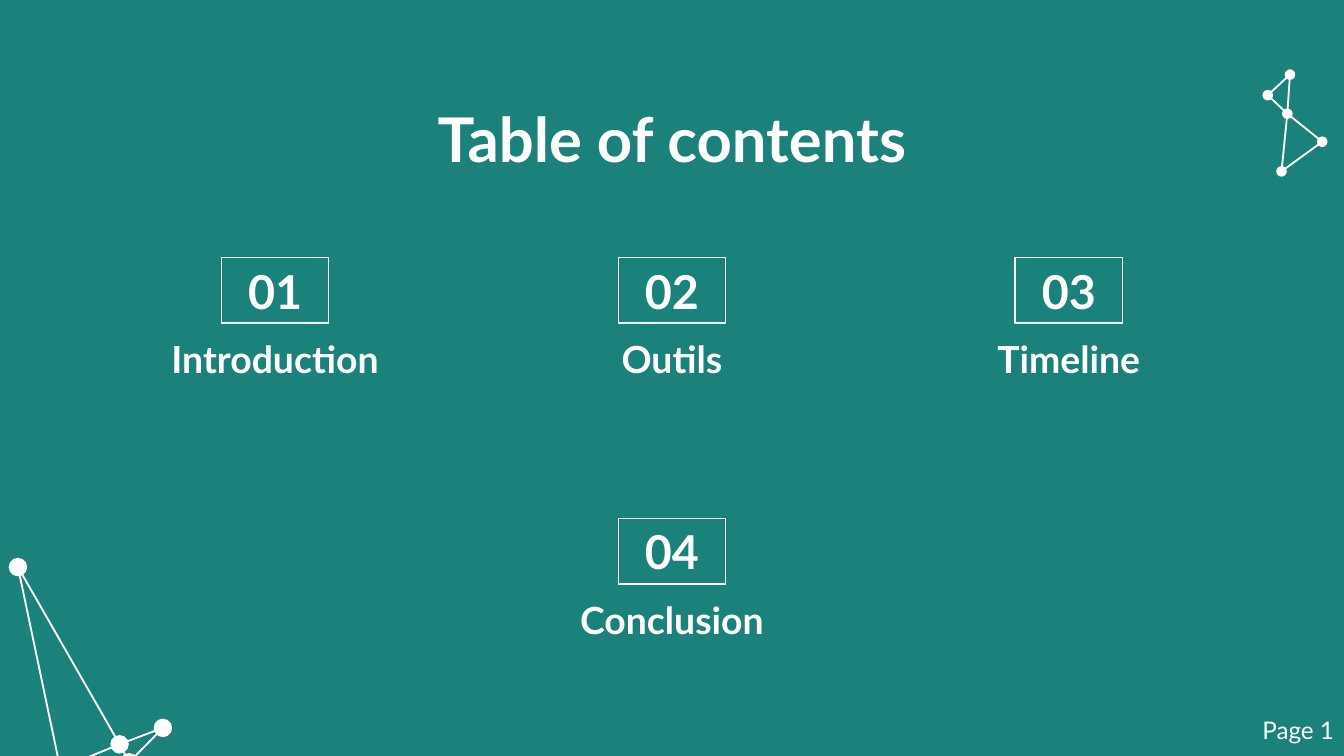
"""Build the table of contents slide with numbered sections and node networks."""
from dataclasses import dataclass
from math import cos, radians, sin

from pptx import Presentation
from pptx.dml.color import RGBColor
from pptx.enum.shapes import MSO_SHAPE
from pptx.enum.text import MSO_ANCHOR, PP_ALIGN
from pptx.shapes.shapetree import GroupShapes
from pptx.slide import Slide
from pptx.text.text import TextFrame
from pptx.util import Cm, Pt

OVAL, RECTANGLE = MSO_SHAPE.OVAL, MSO_SHAPE.RECTANGLE
TOP, MIDDLE = MSO_ANCHOR.TOP, MSO_ANCHOR.MIDDLE
CENTER = PP_ALIGN.CENTER

COLORS = {"background": "1A817B", "foreground": "FFFFFF"}
WHITE = RGBColor.from_string(COLORS["foreground"])
FONT = "Lato"
MARGIN = 0.25
BOX_WIDTH, BOX_HEIGHT = 2.03, 1.24
LABEL_WIDTH, LABEL_HEIGHT = 6.4, 1.4
MIDDLE_X, COLUMN_STEP = 12.7, 7.5
FIRST_ROW, ROW_STEP = 4.87, 4.93

Point = tuple[float, float]


@dataclass(frozen=True)
class Section:
    """A numbered section and its place in the grid."""
    label: str
    column: int
    row: int


@dataclass(frozen=True)
class Network:
    """Points in centimetres, triangles and dots by point name, and a rotation."""
    points: dict[str, Point]
    triangles: tuple[str, ...]
    dots: str
    diameter: float
    rotation: float


SECTIONS = (
    Section("Introduction", -1, 0),
    Section("Outils", 0, 0),
    Section("Timeline", 1, 0),
    Section("Conclusion", 0, 1),
)

NETWORKS = (
    Network(
        {"A": (24.38, 1.41), "B": (23.96, 1.8), "C": (24.33, 2.15),
         "D": (24.99, 2.68), "E": (24.22, 3.24)},
        ("ABC", "CDE"), "ABCDE", 0.2, 0,
    ),
    Network(
        {"A": (0.34, 10.72), "B": (2.26, 14.07), "C": (3.08, 13.76),
         "D": (2.44, 14.41), "E": (1.14, 14.53)},
        ("BCD", "ABE"), "ABCD", 0.35, 45,
    ),
)


def write_text(frame: TextFrame, text: str, *, size: float, bold: bool = True,
               anchor: MSO_ANCHOR = TOP) -> None:
    """Write one centred line into a text frame."""
    frame.word_wrap = True
    frame.vertical_anchor = anchor
    frame.margin_left = frame.margin_right = Cm(MARGIN)
    frame.margin_top = frame.margin_bottom = Cm(MARGIN)
    para = frame.paragraphs[0]
    para.alignment = CENTER
    span = para.add_run()
    span.text = text
    span.font.name = FONT
    span.font.size = Pt(size)
    span.font.bold = bold
    span.font.color.rgb = WHITE


def add_label(page: Slide, text: str, left: float, top: float, width: float,
              height: float, **style) -> None:
    """Add a text box at a place given in centimetres."""
    box = page.shapes.add_textbox(Cm(left), Cm(top), Cm(width), Cm(height))
    write_text(box.text_frame, text, **style)


def add_section(page: Slide, number: int, section: Section) -> None:
    """Add the outlined number of a section and the label below it."""
    center = MIDDLE_X + section.column * COLUMN_STEP
    top = FIRST_ROW + section.row * ROW_STEP
    box = page.shapes.add_shape(RECTANGLE, Cm(center - BOX_WIDTH / 2), Cm(top),
                                Cm(BOX_WIDTH), Cm(BOX_HEIGHT))
    box.shadow.inherit = False
    box.fill.background()
    box.line.color.rgb = WHITE
    box.line.width = Pt(0.75)
    write_text(box.text_frame, f"{number:02}", size=25, anchor=MIDDLE)
    add_label(page, section.label, center - LABEL_WIDTH / 2, top + BOX_HEIGHT,
              LABEL_WIDTH, LABEL_HEIGHT, size=20)


def turn(point: Point, degrees: float) -> Point:
    """Turn a point clockwise about the slide corner."""
    x, y = point
    angle = radians(degrees)
    return x * cos(angle) - y * sin(angle), x * sin(angle) + y * cos(angle)


def add_edges(shapes: GroupShapes, network: Network) -> None:
    """Add the triangles of a network as one outline, rotated about its centre."""
    corners = {name: tuple(map(Cm, turn(point, -network.rotation)))
               for name, point in network.points.items()}
    first, *others = network.triangles
    builder = shapes.build_freeform(*corners[first[0]])
    builder.add_line_segments([corners[name] for name in first[1:]])
    for triangle in others:
        builder.move_to(*corners[triangle[0]])
        builder.add_line_segments([corners[name] for name in triangle[1:]])
    edges = builder.convert_to_shape()
    middle = (edges.left + edges.width / 2, edges.top + edges.height / 2)
    x, y = turn(middle, network.rotation)
    edges.left, edges.top = round(x - edges.width / 2), round(y - edges.height / 2)
    edges.rotation = network.rotation
    edges.shadow.inherit = False
    edges.fill.background()
    edges.line.color.rgb = WHITE
    edges.line.width = Pt(1)


def add_network(page: Slide, network: Network) -> None:
    """Add a group of dots joined by straight lines."""
    shapes = page.shapes.add_group_shape().shapes
    add_edges(shapes, network)
    for name in network.dots:
        left, top = (Cm(value - network.diameter / 2) for value in network.points[name])
        dot = shapes.add_shape(OVAL, left, top, Cm(network.diameter), Cm(network.diameter))
        dot.shadow.inherit = False
        dot.fill.solid()
        dot.fill.fore_color.rgb = WHITE
        dot.line.fill.background()


def main() -> None:
    """Build and save the deck."""
    deck = Presentation()
    deck.slide_width, deck.slide_height = Cm(25.4), Cm(14.29)
    page = deck.slides.add_slide(deck.slide_layouts[6])
    page.background.fill.solid()
    page.background.fill.fore_color.rgb = RGBColor.from_string(COLORS["background"])
    for network in NETWORKS:
        add_network(page, network)
    add_label(page, "Table of contents", 2, 1.65, 21.4, 1.6, size=33)
    for number, section in enumerate(SECTIONS, start=1):
        add_section(page, number, section)
    add_label(page, "Page 1", 23.52, 13.18, BOX_WIDTH, BOX_HEIGHT,
              size=13, bold=False, anchor=MIDDLE)
    deck.save("out.pptx")


if __name__ == "__main__":
    main()
